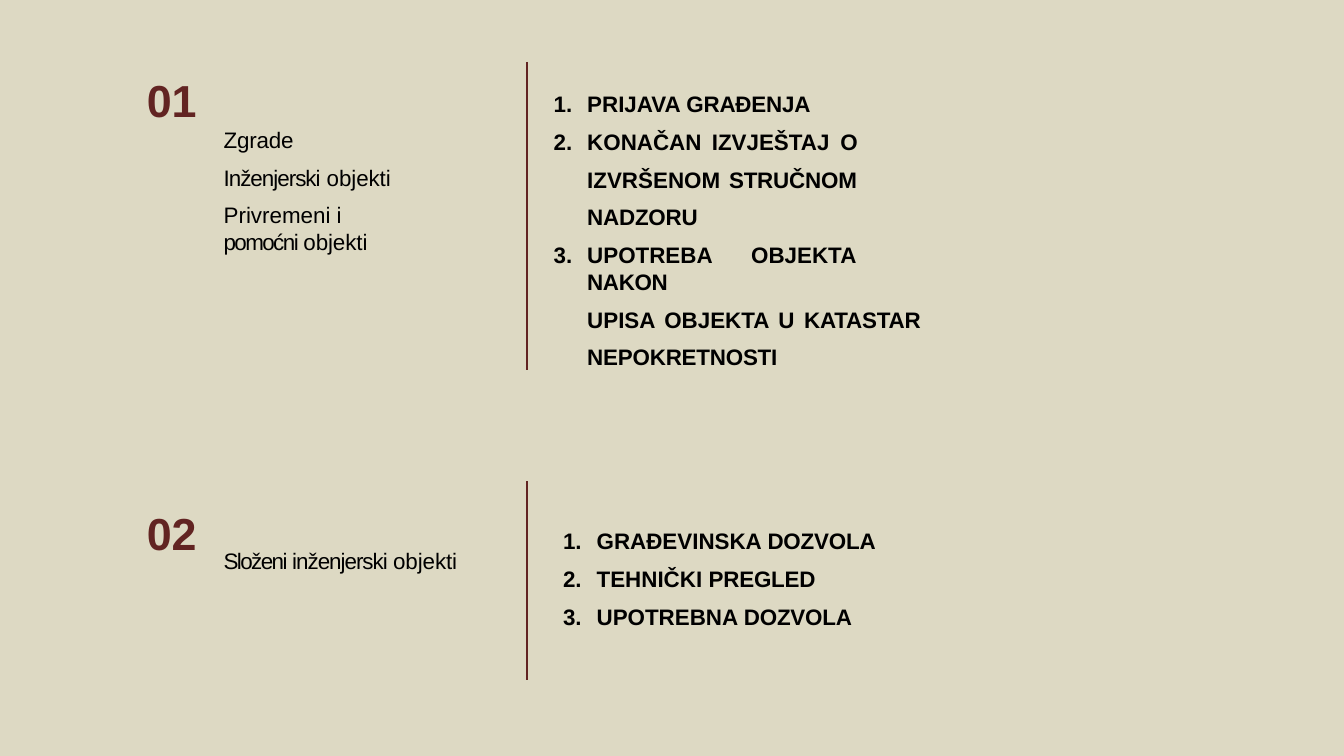
from dataclasses import dataclass

from lxml import etree
from pptx import Presentation
from pptx.dml.color import RGBColor
from pptx.enum.shapes import MSO_CONNECTOR
from pptx.enum.text import MSO_AUTO_SIZE, PP_ALIGN
from pptx.oxml.ns import qn
from pptx.util import Inches, Pt

LEFT, JUST = PP_ALIGN.LEFT, PP_ALIGN.JUSTIFY
GROW = MSO_AUTO_SIZE.SHAPE_TO_FIT_TEXT
STRAIGHT = MSO_CONNECTOR.STRAIGHT
SAND, WINE, BLACK = "DDD9C3", "622422", "000000"
FONT = "Arial"
WIDTH = Inches(10)
HEIGHT = WIDTH * 9 // 16
COL = ROW = WIDTH // 100  # square grid, 100 columns wide
NUM_X, KIND_X, RULE_X = 10.8, 16.5, 39.2


@dataclass(frozen=True)
class Para:
    """Runs are (text, tracking in points); indents are in columns."""
    runs: tuple[tuple[str, float], ...]
    before: float = 1
    lines: float | None = None
    left: float = 0.14
    right: float = 0
    number: bool = False
    align: PP_ALIGN = LEFT


@dataclass(frozen=True)
class Box:
    x: float
    y: float
    w: float
    h: float


@dataclass(frozen=True)
class Group:
    label: str
    label_y: float
    kinds: tuple[Para, ...]
    kind_box: Box
    steps: tuple[Para, ...]
    step_box: Box
    rule: tuple[float, float]


def paint(hue: str) -> RGBColor:
    return RGBColor.from_string(hue)


def step(*runs: tuple[str, float], **form) -> Para:
    return Para(runs, **{"before": 5.8, "left": 2.6, "number": True, **form})


def break_line(para, size: float) -> None:
    """Break the line at the text's own size, so that its height holds."""
    para.add_line_break()
    props = etree.SubElement(para._p[-1], qn("a:rPr"))
    props.set("sz", str(round(size * 100)))


def write(slide, box: Box, paras: tuple[Para, ...], *, size: float = 12,
          hue: str = BLACK, bold: bool = False, top: float = 0.1) -> None:
    shape = slide.shapes.add_textbox(
        round(box.x * COL), round(box.y * ROW),
        round(box.w * COL), round(box.h * ROW))
    frame = shape.text_frame
    frame.word_wrap = True
    frame.auto_size = GROW
    frame.margin_left = frame.margin_right = frame.margin_bottom = 0
    frame.margin_top = round(top * ROW)
    for i, item in enumerate(paras):
        para = frame.paragraphs[0] if i == 0 else frame.add_paragraph()
        para.alignment = item.align
        para.space_before = Pt(item.before)
        if item.lines:
            para.line_spacing = item.lines
        props = para._p.get_or_add_pPr()
        props.set("marL", str(round(item.left * COL)))
        props.set("marR", str(round(item.right * COL)))
        props.set("indent", str(round(-2.5 * COL) if item.number else 0))
        if item.number:
            face = etree.SubElement(props, qn("a:buFont"))
            face.set("typeface", FONT)
            mark = etree.SubElement(props, qn("a:buAutoNum"))
            mark.set("type", "arabicPeriod")
        else:
            etree.SubElement(props, qn("a:buNone"))
        for text, track in item.runs:
            run = para.add_run()
            run.text = text.rstrip("\n")
            font = run.font
            font.name, font.size, font.bold = FONT, Pt(size), bold
            font.color.rgb = paint(hue)
            run._r.get_or_add_rPr().set("spc", str(round(track * 100)))
            if text.endswith("\n"):
                break_line(para, size)


def draw_rule(slide, top: float, end: float) -> None:
    x = round(RULE_X * COL)
    rule = slide.shapes.add_connector(
        STRAIGHT, x, round(top * ROW), x, round(end * ROW))
    rule.line.color.rgb = paint(WINE)
    rule.line.width = Pt(0.96)
    etree.SubElement(rule._element.spPr, qn("a:effectLst"))


def draw_group(slide, group: Group) -> None:
    write(slide, group.kind_box, group.kinds)
    write(slide, Box(NUM_X, group.label_y, 4, 4.3),
          (Para(((group.label, -0.2),)),), size=24, hue=WINE, bold=True)
    draw_rule(slide, *group.rule)
    write(slide, group.step_box, group.steps, bold=True, top=0.9)


GROUPS = (
    Group(
        "01", 5.3,
        (Para((("Zgrade \n", -0.1), ("Inženjerski", -0.55),
               (" objekti", -0.05)), before=1.4, lines=1.4, right=8),
         Para((("Privremeni i ", 0), ("pomoćni ", -0.85),
               ("objekti", -0.05)), before=5.8, right=8)),
        Box(KIND_X, 8.5, 21.1, 8.7),
        (step(("PRIJAVA ", 0), ("GRAĐENJA", -0.1), before=6.8, align=JUST),
         step(("KONAČAN IZVJEŠTAJ ", 0), ("O ", -0.5), ("IZVRŠENOM ", 0),
              ("STRUČNOM NADZORU", -0.1),
              before=0, lines=1.4, right=4.75, align=JUST),
         step(("UPOTREBA OBJEKTA", 0), (" NAKON", -0.2),
              right=4.75, align=JUST),
         step(("UPISA OBJEKTA U", 0), (" KATASTAR NEPOKRETNOSTI", -0.1),
              before=0.1, lines=1.4, number=False, align=JUST)),
        Box(41.1, 5.83, 27.4, 19.9), (4.6, 27.5)),
    Group(
        "02", 37.55,
        (Para((("Složeni ", -0.85), ("inženjerski ", -0.55),
               ("objekti", -0.05))),),
        Box(KIND_X, 40.6, 19.3, 2.3),
        (step(("GRAĐEVINSKA ", 0), ("DOZVOLA", -0.1), before=6.8),
         step(("TEHNIČKI ", 0), ("PREGLED", -0.1)),
         step(("UPOTREBNA ", 0), ("DOZVOLA", -0.1))),
        Box(41.8, 38.35, 23.7, 8.7), (35.8, 50.6)),
)


def main() -> None:
    deck = Presentation()
    deck.slide_width, deck.slide_height = WIDTH, HEIGHT
    slide = deck.slides.add_slide(deck.slide_layouts[6])
    fill = slide.background.fill
    fill.solid()
    fill.fore_color.rgb = paint(SAND)
    for group in GROUPS:
        draw_group(slide, group)
    deck.save("out.pptx")


if __name__ == "__main__":
    main()
